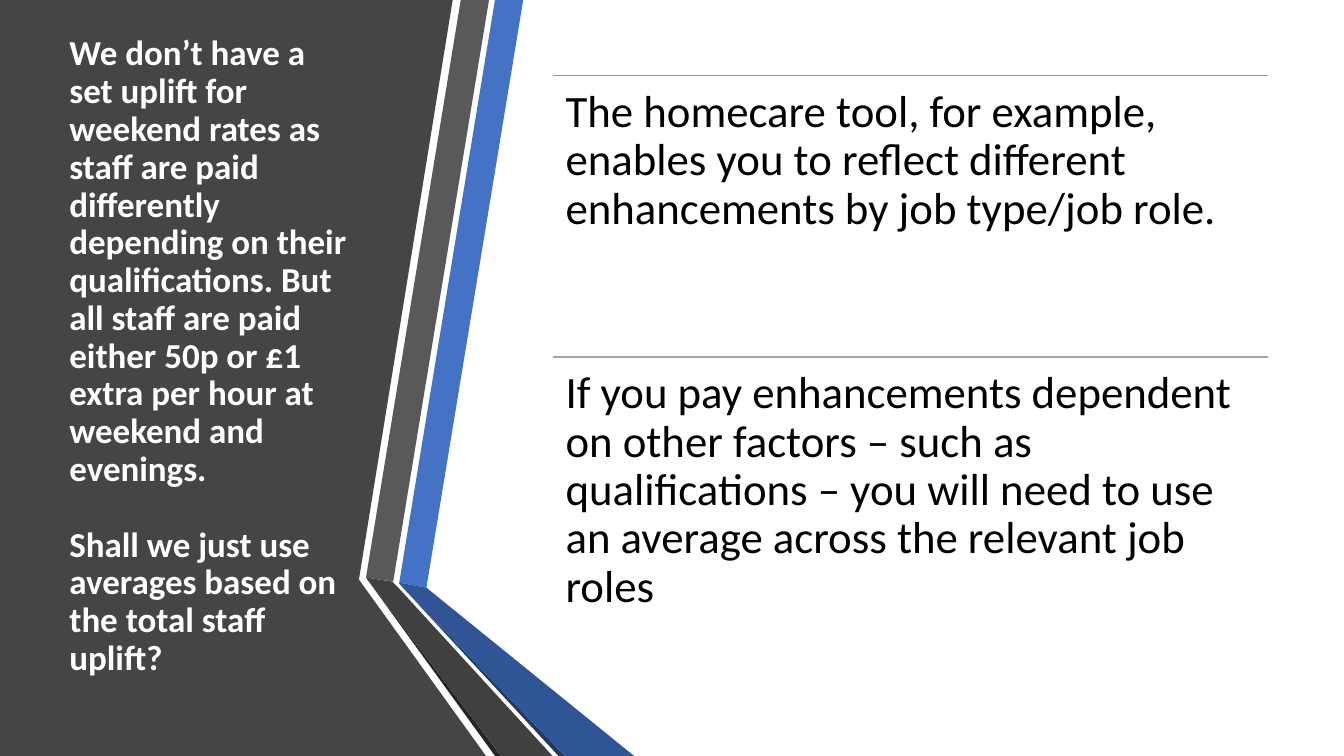
from lxml import etree
from pptx import Presentation
from pptx.dml.color import RGBColor
from pptx.enum.shapes import MSO_CONNECTOR
from pptx.enum.text import MSO_ANCHOR
from pptx.oxml.ns import qn
from pptx.util import Inches, Pt

STRAIGHT = MSO_CONNECTOR.STRAIGHT
TOP, MIDDLE = MSO_ANCHOR.TOP, MSO_ANCHOR.MIDDLE


def color(hex_string):
    return RGBColor.from_string(hex_string)


def add_text(left, top, width, height, lines, size, text_color, bold, anchor, inset_x, inset_y):
    frame = slide.shapes.add_textbox(
        Inches(left), Inches(top), Inches(width), Inches(height)).text_frame
    frame.word_wrap = True
    frame.vertical_anchor = anchor
    frame.margin_left = frame.margin_right = Inches(inset_x)
    frame.margin_top = frame.margin_bottom = Inches(inset_y)
    paragraph = frame.paragraphs[0]
    paragraph.line_spacing = 0.9
    paragraph.font.size = Pt(size)
    for index, line in enumerate(lines):
        if index:
            paragraph.add_line_break()
            paragraph.add_line_break()
        run = paragraph.add_run()
        run.text = line
        run.font.name = "Calibri"
        run.font.size = Pt(size)
        run.font.bold = bold
        run.font.color.rgb = color(text_color)


prs = Presentation()
prs.slide_width, prs.slide_height = Inches(13.33), Inches(7.5)
slide = prs.slides.add_slide(prs.slide_layouts[6])

# Dark side panel and the folded ribbons along its edge, back to front
panel_and_ribbons = [
    ("454545", [(0, 0), (3.53, 0), (4.49, 0), (3.56, 5.75), (4.82, 7.5), (0, 7.5)]),
    ("4472C4", [(3.96, 5.78), (4.23, 5.83), (5.19, 0), (4.91, 0)]),
    ("595959", [(4.85, 0), (4.57, 0), (3.63, 5.73), (3.9, 5.77)]),
    ("262626", [(3.63, 5.73), (4.91, 7.5), (4.97, 7.5)]),
    ("203864", [(3.96, 5.79), (5.54, 7.5), (5.6, 7.5)]),
    ("2F5597", [(3.96, 5.79), (5.6, 7.5), (6.29, 7.5), (4.23, 5.83), (3.96, 5.78)]),
    ("404040", [(3.63, 5.73), (4.97, 7.5), (5.48, 7.5), (3.95, 5.83), (3.89, 5.77)]),
]
for fill, corners in panel_and_ribbons:
    points = [(Inches(x), Inches(y)) for x, y in corners]
    outline = slide.shapes.build_freeform(*points[0])
    outline.add_line_segments(points[1:], close=True)
    band = outline.convert_to_shape()
    band.shadow.inherit = False
    band.fill.solid()
    band.fill.fore_color.rgb = color(fill)
    band.line.fill.background()

# Question on the panel
question = [
    "We don’t have a set uplift for weekend rates as staff are paid differently "
    "depending on their qualifications. But all staff are paid either 50p or £1 "
    "extra per hour at weekend and evenings.",
    "Shall we just use averages based on the total staff uplift?",
]
add_text(0.59, 0.75, 3.04, 5.58, question, 25, "FFFFFF", True, MIDDLE, 0.1, 0.05)

# Answers, each under its own rule
answers = [
    ("ED7D31", "The homecare tool, for example, enables you to reflect different "
               "enhancements by job type/job role."),
    ("A5A5A5", "If you pay enhancements dependent on other factors – such as "
               "qualifications – you will need to use an average across the "
               "relevant job roles"),
]
ANSWER_LEFT, ANSWER_TOP, ANSWER_WIDTH, ANSWER_HEIGHT = 5.48, 0.75, 7.1, 2.79
for row, (rule_color, answer) in enumerate(answers):
    top = ANSWER_TOP + row * ANSWER_HEIGHT
    rule = slide.shapes.add_connector(
        STRAIGHT, Inches(ANSWER_LEFT), Inches(top),
        Inches(ANSWER_LEFT + ANSWER_WIDTH), Inches(top))
    rule.line.color.rgb = color(rule_color)
    rule.line.width = Pt(1)
    etree.SubElement(rule.element.spPr, qn("a:effectLst"))
    add_text(ANSWER_LEFT, top, ANSWER_WIDTH, ANSWER_HEIGHT, [answer],
             32, "000000", False, TOP, 0.13, 0.13)

prs.save("out.pptx")
